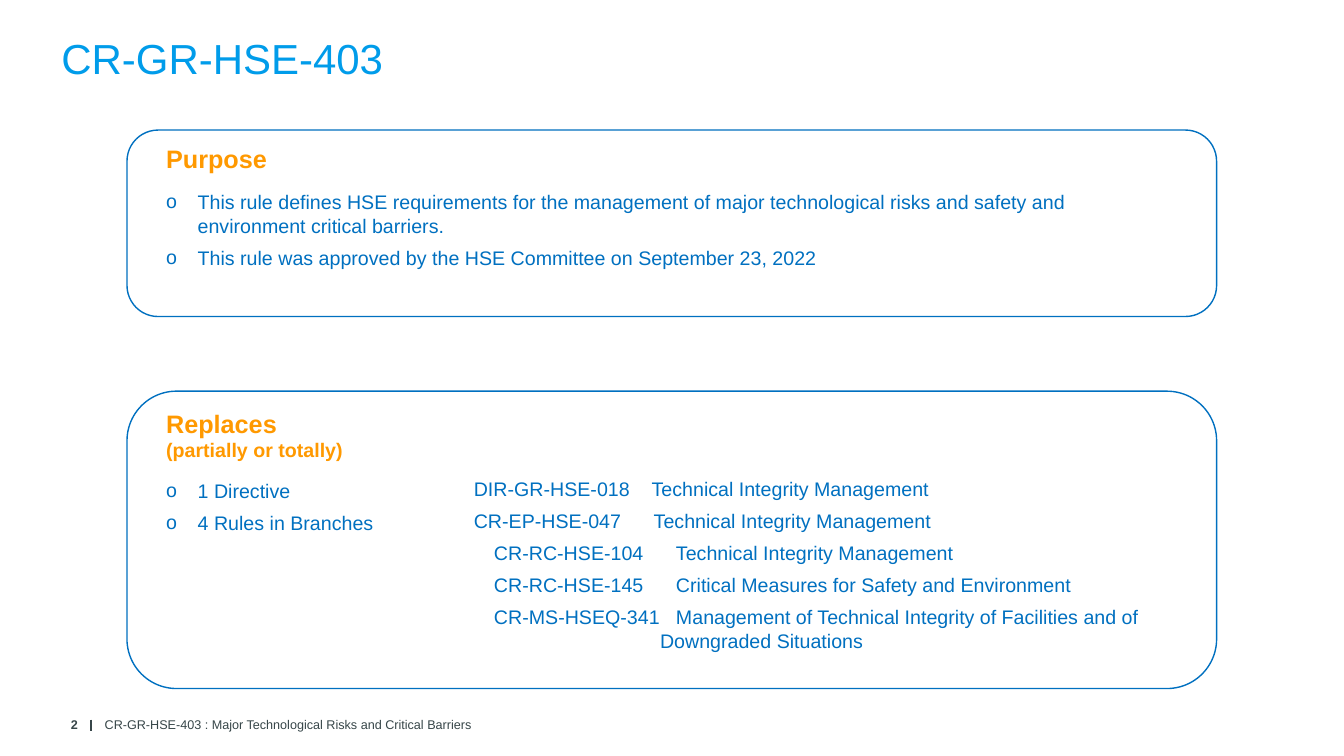
from pptx import Presentation
from pptx.dml.color import RGBColor
from pptx.enum import shapes, text
from pptx.oxml import ns, xmlchemy
from pptx.util import Pt

SKY = RGBColor(0x00, 0x9C, 0xEA)
BLUE = RGBColor(0x00, 0x70, 0xC0)
ORANGE = RGBColor(0xFF, 0x99, 0x00)
SLATE = RGBColor(0x37, 0x46, 0x49)

TITLE_STYLE = {"size": Pt(30), "color": SKY}
HEADING = {"size": Pt(18), "color": ORANGE, "bold": True}
SUBHEADING = {**HEADING, "size": Pt(14)}
BODY = {"size": Pt(14), "color": BLUE}
FOOTER = {"size": Pt(9), "color": SLATE}
PAGE = {**FOOTER, "bold": True}

TITLE = "CR-GR-HSE-403"
FOOTER_TEXT = "CR-GR-HSE-403 : Major Technological Risks and Critical Barriers"
PAGE_NUMBER = "2"
PURPOSE = [
    "This rule defines HSE requirements for the management of major technological "
    "risks and safety and environment critical barriers.",
    "This rule was approved by the HSE Committee on September 23, 2022",
]
REPLACED_KINDS = ["1 Directive", "4 Rules in Branches"]
# Tab stops in points, space after in points, text
REPLACED_RULES = [
    ([127], 6, "DIR-GR-HSE-018\tTechnical Integrity Management"),
    ([128.5], 6, "CR-EP-HSE-047\tTechnical Integrity Management"),
    ([14.4, 144.4], 6, "\tCR-RC-HSE-104\tTechnical Integrity Management"),
    ([14.4, 144.4], 6, "\tCR-RC-HSE-145\tCritical Measures for Safety and Environment"),
    ([14.4, 144.4], 0,
     "\tCR-MS-HSEQ-341\tManagement of Technical Integrity of Facilities and of"),
    ([133], 0, "\tDowngraded Situations"),
]

PANEL_LEFT, PANEL_WIDTH = 90.7, 778.3
PANELS = [(92.9, 133.2), (279.4, 212.4)]  # top, height
TEXT_LEFT = 111.6
BULLET_INDENT = 22.5


def add_panel(slide, top, height):
    shape = slide.shapes.add_shape(
        shapes.MSO_SHAPE.ROUNDED_RECTANGLE,
        Pt(PANEL_LEFT), Pt(top), Pt(PANEL_WIDTH), Pt(height))
    shape.shadow.inherit = False
    shape.fill.background()
    shape.line.color.rgb = BLUE
    shape.line.width = Pt(1)


def add_frame(slide, left, top, width, height, anchor=text.MSO_ANCHOR.TOP):
    box = slide.shapes.add_textbox(Pt(left), Pt(top), Pt(width), Pt(height))
    frame = box.text_frame
    frame.word_wrap = True
    frame.vertical_anchor = anchor
    return frame


def add_run(paragraph, content, style):
    run = paragraph.add_run()
    run.text = content
    run.font.name = "Arial"
    for name, value in style.items():
        if name == "color":
            run.font.color.rgb = value
        else:
            setattr(run.font, name, value)


def add_property(parent, tag, **attributes):
    element = xmlchemy.OxmlElement(tag)
    for name, value in attributes.items():
        element.set(name, str(value))
    parent.append(element)
    return element


def add_bullets(frame, items, first_gap):
    for index, item in enumerate(items):
        paragraph = frame.add_paragraph()
        properties = paragraph._p.get_or_add_pPr()
        properties.set("marL", str(Pt(BULLET_INDENT)))
        properties.set("indent", str(-Pt(BULLET_INDENT)))
        add_property(properties, "a:buFont", typeface="Arial")
        add_property(properties, "a:buChar", char="o")
        paragraph.space_before = Pt(6 if index else first_gap)
        add_run(paragraph, item, BODY)


def add_rules(frame, rules):
    for index, (stops, gap, content) in enumerate(rules):
        paragraph = frame.add_paragraph() if index else frame.paragraphs[0]
        tabs = add_property(paragraph._p.get_or_add_pPr(), "a:tabLst")
        for stop in stops:
            add_property(tabs, "a:tab", pos=Pt(stop), algn="l")
        paragraph.space_after = Pt(gap)
        add_run(paragraph, content, BODY)


def add_footer(slide):
    divider = slide.shapes.add_connector(
        shapes.MSO_CONNECTOR.STRAIGHT, Pt(65), Pt(514), Pt(65), Pt(522))
    divider.line.color.rgb = SLATE
    divider.line.width = Pt(1)
    divider._element.find(ns.qn("p:spPr")).append(xmlchemy.OxmlElement("a:effectLst"))
    middle = text.MSO_ANCHOR.MIDDLE
    frame = add_frame(slide, 67.7, 507.6, 838.8, 20.2, middle)
    add_run(frame.paragraphs[0], FOOTER_TEXT, FOOTER)
    number = add_frame(slide, 17.3, 507.6, 45.4, 20.2, middle).paragraphs[0]
    number.alignment = text.PP_ALIGN.RIGHT
    add_run(number, PAGE_NUMBER, PAGE)


def main():
    presentation = Presentation()
    presentation.slide_width, presentation.slide_height = Pt(960), Pt(540)
    slide = presentation.slides.add_slide(presentation.slide_layouts[6])

    add_footer(slide)
    title = add_frame(slide, 36.7, 19.4, 765.4, 79.2)
    add_run(title.paragraphs[0], TITLE, TITLE_STYLE)
    for top, height in PANELS:
        add_panel(slide, top, height)

    purpose = add_frame(slide, TEXT_LEFT, 98.6, 704.9, 97.9)
    heading = purpose.paragraphs[0]
    heading.space_after = Pt(12)
    add_run(heading, "Purpose", HEADING)
    add_bullets(purpose, PURPOSE, 0)

    replaces = add_frame(slide, TEXT_LEFT, 288, 215, 184.3)
    heading = replaces.paragraphs[0]
    add_run(heading, "Replaces", HEADING)
    heading.add_line_break()
    add_run(heading, "(partially or totally)", SUBHEADING)
    add_bullets(replaces, REPLACED_KINDS, 12)
    add_rules(add_frame(slide, 331.4, 337.4, 570, 135), REPLACED_RULES)

    presentation.save("out.pptx")


if __name__ == "__main__":
    main()
